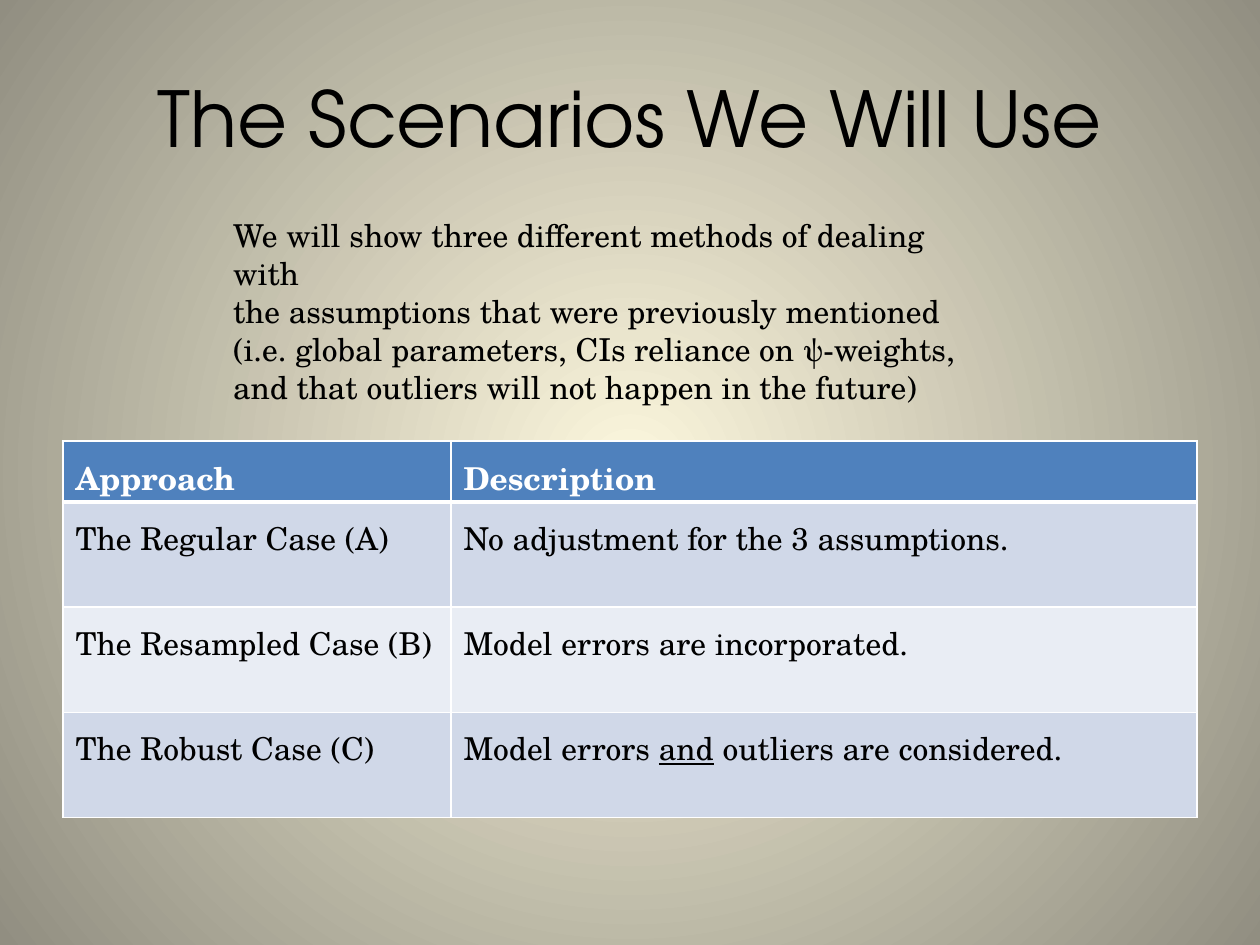
from lxml.etree import SubElement
from pptx import Presentation
from pptx.dml.color import RGBColor
from pptx.enum.text import MSO_ANCHOR, PP_ALIGN
from pptx.oxml.ns import qn
from pptx.util import Cm, Pt

BLACK = RGBColor(0x00, 0x00, 0x00)
WHITE = RGBColor(0xFF, 0xFF, 0xFF)
HEADER_BLUE = RGBColor(0x4F, 0x81, 0xBD)
BANDS = (RGBColor(0xD0, 0xD8, 0xE8), RGBColor(0xE9, 0xED, 0xF4))
GLOW = RGBColor(0xFC, 0xF7, 0xDD)
EDGE = RGBColor(0x91, 0x8E, 0x81)

TITLE_FORMAT = {"name": "TeX Gyre Adventor", "size": Pt(44)}
BODY_FORMAT = {"name": "TeX Gyre Schola", "size": Pt(18)}
HEADER_FORMAT = {**BODY_FORMAT, "bold": True}

INTRODUCTION = [
    "We will show three different methods of dealing with",
    "the assumptions that were previously mentioned",
    "(i.e. global parameters, CIs reliance on ψ-weights,",
    "and that outliers will not happen in the future)",
]
# Each cell is a list of runs; every second run is underlined
SCENARIOS = [
    (["Approach"], ["Description"]),
    (["The Regular Case (A)"], ["No adjustment for the 3 assumptions."]),
    (["The Resampled Case (B)"], ["Model errors are incorporated."]),
    (["The Robust Case (C)"],
     ["Model errors ", "and", " outliers are considered."]),
]
COLUMN_WIDTHS = (Cm(7.82), Cm(15.04))
HEADER_HEIGHT, ROW_HEIGHT = Cm(1.23), Cm(2.12)


def add_run(paragraph, text, font_format, color=BLACK):
    run = paragraph.add_run()
    run.text = text
    for attribute, value in font_format.items():
        setattr(run.font, attribute, value)
    run.font.color.rgb = color
    return run


def set_background(slide):
    fill = slide.background.fill
    fill.gradient()
    for stop, position, color in zip(fill.gradient_stops, (0, 1), (GLOW, EDGE)):
        stop.position = position
        stop.color.rgb = color
    # Turn the linear gradient into a circular one around the centre
    gradient = slide._element.find(".//" + qn("a:gradFill"))
    gradient.remove(gradient.find(qn("a:lin")))
    circle = SubElement(gradient, qn("a:path"), {"path": "circle"})
    SubElement(circle, qn("a:fillToRect"), dict.fromkeys("ltrb", "50000"))


def add_text(slide, box, lines, font_format, frame_format, alignment):
    frame = slide.shapes.add_textbox(*box).text_frame
    for attribute, value in frame_format.items():
        setattr(frame, attribute, value)
    for index, line in enumerate(lines):
        paragraph = frame.add_paragraph() if index else frame.paragraphs[0]
        paragraph.alignment = alignment
        add_run(paragraph, line, font_format)


def set_borders(cell, widths):
    properties = cell._tc.get_or_add_tcPr()
    for side, width in widths.items():
        line = SubElement(properties, qn(f"a:ln{side}"), {"w": str(Pt(width))})
        fill = SubElement(line, qn("a:solidFill"))
        SubElement(fill, qn("a:srgbClr"), {"val": str(WHITE)})


def fill_cell(cell, runs, is_header, background):
    set_borders(cell, {"L": 1, "R": 1, "T": 1, "B": 3 if is_header else 1})
    cell.fill.solid()
    cell.fill.fore_color.rgb = background
    cell.margin_top = Cm(0.25)
    for index, text in enumerate(runs):
        run = add_run(cell.text_frame.paragraphs[0], text,
                      HEADER_FORMAT if is_header else BODY_FORMAT,
                      WHITE if is_header else BLACK)
        if index % 2:
            run.font.underline = True


def add_scenario_table(slide, left, top):
    height = HEADER_HEIGHT + ROW_HEIGHT * (len(SCENARIOS) - 1)
    table = slide.shapes.add_table(len(SCENARIOS), len(COLUMN_WIDTHS), left,
                                   top, sum(COLUMN_WIDTHS), height).table
    for column, width in zip(table.columns, COLUMN_WIDTHS):
        column.width = width
    for row_index, scenario in enumerate(SCENARIOS):
        is_header = row_index == 0
        table.rows[row_index].height = HEADER_HEIGHT if is_header else ROW_HEIGHT
        background = HEADER_BLUE if is_header else BANDS[(row_index - 1) % 2]
        for column_index, runs in enumerate(scenario):
            fill_cell(table.cell(row_index, column_index), runs, is_header,
                      background)


def main():
    presentation = Presentation()
    presentation.slide_width, presentation.slide_height = Cm(25.4), Cm(19.05)
    slide = presentation.slides.add_slide(presentation.slide_layouts[6])
    set_background(slide)

    # Title
    add_text(slide, (Cm(1.27), Cm(0.76), Cm(22.86), Cm(3.18)),
             ["The Scenarios We Will Use"], TITLE_FORMAT,
             {"word_wrap": True, "vertical_anchor": MSO_ANCHOR.MIDDLE},
             PP_ALIGN.CENTER)

    # Scenario table
    add_scenario_table(slide, Cm(1.27), Cm(8.89))

    # Introduction
    add_text(slide, (Cm(4.45), Cm(4.24), Cm(15.65), Cm(4.11)), INTRODUCTION,
             BODY_FORMAT, {"word_wrap": True}, PP_ALIGN.LEFT)

    presentation.save("out.pptx")


if __name__ == "__main__":
    main()
